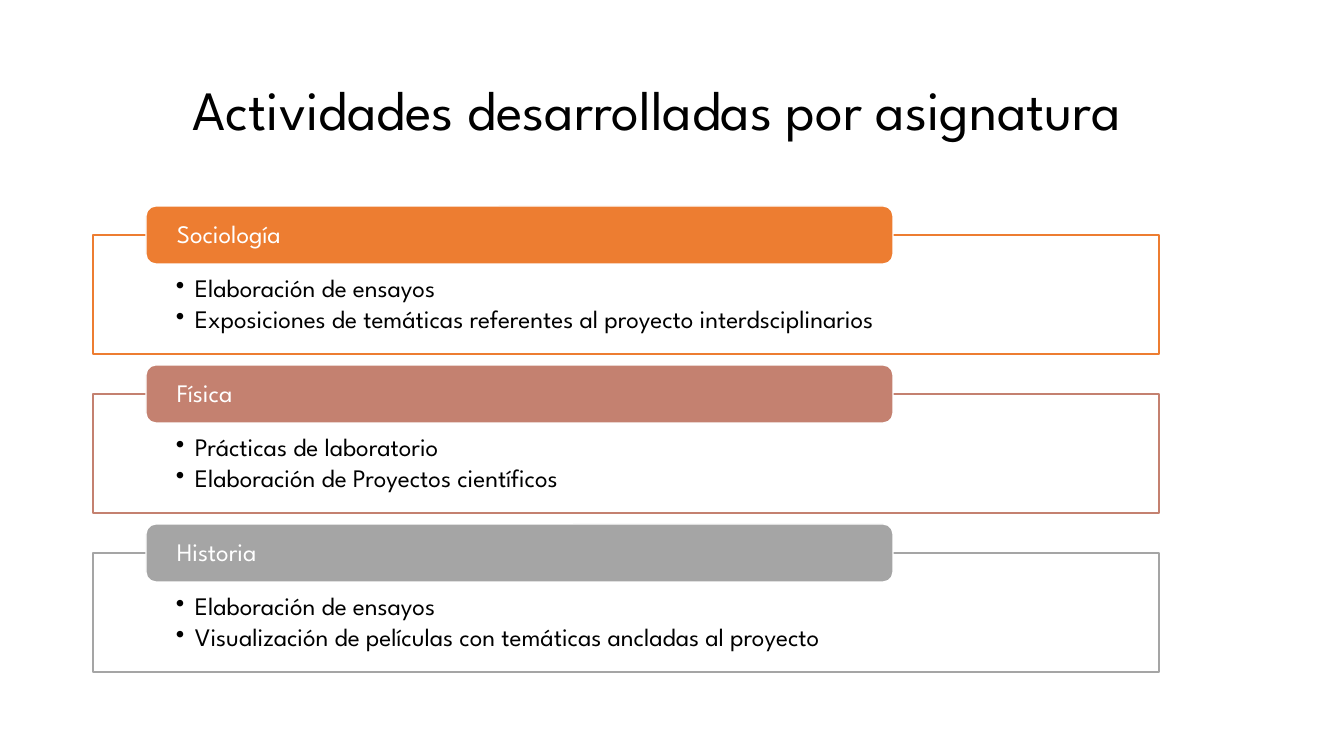
from lxml import etree
from pptx import Presentation
from pptx.dml.color import RGBColor
from pptx.enum.shapes import MSO_SHAPE
from pptx.enum.text import MSO_ANCHOR, MSO_AUTO_SIZE, PP_ALIGN
from pptx.oxml.ns import qn
from pptx.util import Pt

PX = 914400 / 100.8
FONT = "League Spartan"
RECTANGLE = MSO_SHAPE.RECTANGLE
ROUNDED = MSO_SHAPE.ROUNDED_RECTANGLE
TOP, MIDDLE = MSO_ANCHOR.TOP, MSO_ANCHOR.MIDDLE
LEFT, CENTER = PP_ALIGN.LEFT, PP_ALIGN.CENTER
NO_AUTOFIT = MSO_AUTO_SIZE.NONE
COLORS = {
    "white": "FFFFFF",
    "black": "000000",
    "orange": "ED7D31",
    "clay": "C48170",
    "gray": "A5A5A5",
}
SUBJECTS = [
    ("Sociología", "orange", [
        "Elaboración de ensayos",
        "Exposiciones de temáticas referentes al proyecto interdsciplinarios",
    ]),
    ("Física", "clay", [
        "Prácticas de laboratorio",
        "Elaboración de Proyectos científicos",
    ]),
    ("Historia", "gray", [
        "Elaboración de ensayos",
        "Visualización de películas con temáticas ancladas al proyecto",
    ]),
]
FIRST_TOP, PITCH, HEADING_RISE = 235, 159, 29


def px(value):
    return round(value * PX)


def add_panel(preset, box, fill, line, anchor, margins):
    panel = slide.shapes.add_shape(preset, *map(px, box))
    panel.shadow.inherit = False
    panel.fill.solid()
    panel.fill.fore_color.rgb = RGBColor.from_string(COLORS[fill])
    panel.line.color.rgb = RGBColor.from_string(COLORS[line])
    panel.line.width = Pt(1)
    frame = panel.text_frame
    frame.word_wrap = True
    frame.vertical_anchor = anchor
    frame.margin_left, frame.margin_top, frame.margin_right, frame.margin_bottom = map(px, margins)
    return frame


def add_text(paragraph, text, size, color, align):
    paragraph.alignment = align
    paragraph.line_spacing = 0.9
    run = paragraph.add_run()
    run.text = text
    run.font.name = FONT
    run.font.size = Pt(size)
    run.font.color.rgb = RGBColor.from_string(COLORS[color])


prs = Presentation()
prs.slide_width, prs.slide_height = px(1344), px(756)
slide = prs.slides.add_slide(prs.slide_layouts[5])

title = slide.shapes.title
title.left, title.top, title.width, title.height = map(px, (93, 40, 1159, 146))
title.text_frame.auto_size = NO_AUTOFIT
title.text_frame.vertical_anchor = MIDDLE
title.text_frame.margin_right = px(41)
add_text(title.text_frame.paragraphs[0], "Actividades desarrolladas por asignatura", 39.6, "black", CENTER)

for index, (subject, color, activities) in enumerate(SUBJECTS):
    top = FIRST_TOP + index * PITCH
    details = add_panel(RECTANGLE, (93, top, 1066, 119), "white", color, TOP, (83, 41, 83, 14))
    for position, activity in enumerate(activities):
        paragraph = details.add_paragraph() if position else details.paragraphs[0]
        properties = paragraph._p.get_or_add_pPr()
        properties.set("marL", str(px(19)))
        properties.set("indent", str(px(-19)))
        etree.SubElement(properties, qn("a:buChar")).set("char", "•")
        paragraph.space_after = Pt(2.7)
        add_text(paragraph, activity, 18, "black", LEFT)

    heading = add_panel(ROUNDED, (146, top - HEADING_RISE, 747, 58), color, "white", MIDDLE, (28, 0, 28, 0))
    add_text(heading.paragraphs[0], subject, 18, "white", LEFT)

prs.save("out.pptx")
